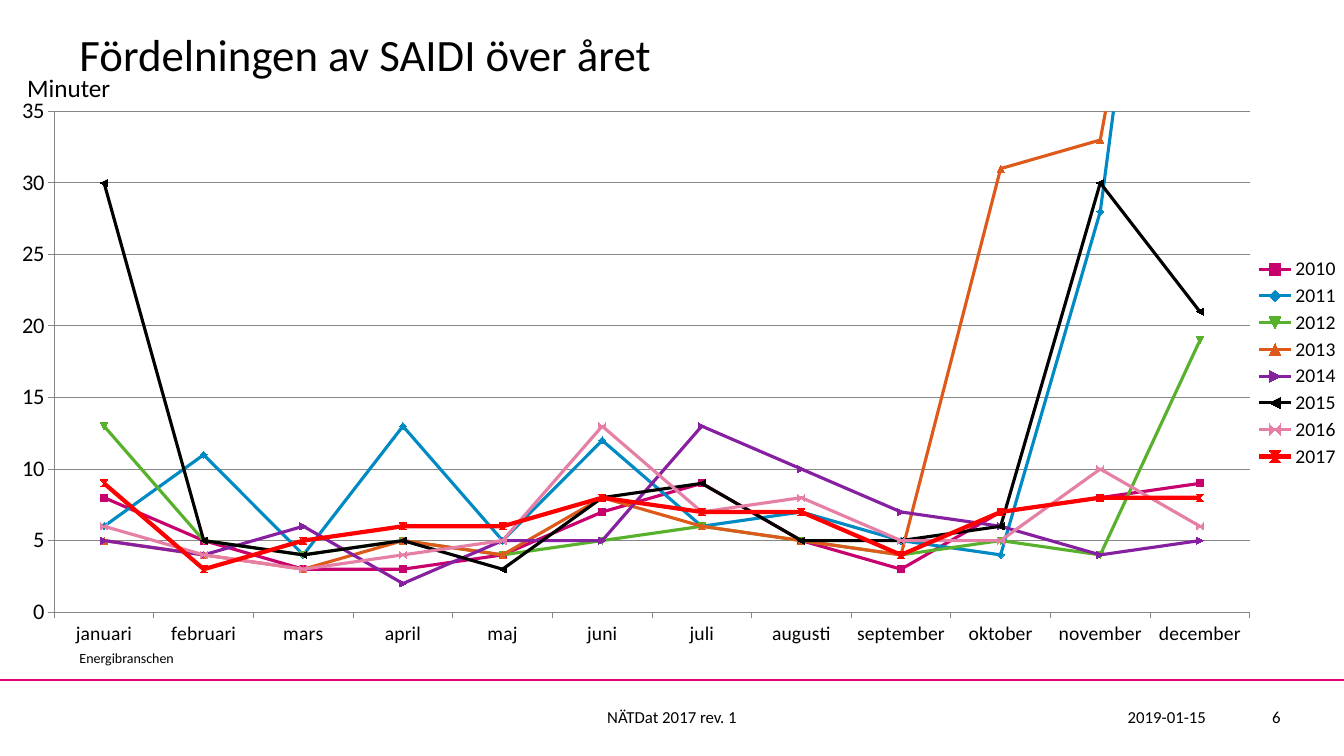
from pptx import Presentation
from pptx.chart.data import CategoryChartData
from pptx.dml.color import RGBColor
from pptx.enum.chart import XL_CHART_TYPE, XL_LEGEND_POSITION, XL_TICK_MARK
from pptx.enum.shapes import MSO_CONNECTOR
from pptx.enum.text import MSO_ANCHOR, PP_ALIGN
from pptx.oxml import parse_xml
from pptx.oxml.ns import nsdecls, qn
from pptx.util import Inches, Pt
from lxml.etree import SubElement

# Content
MONTHS = ["januari", "februari", "mars", "april", "maj", "juni", "juli",
          "augusti", "september", "oktober", "november", "december"]
MINUTES = {
    "2010": [8, 5, 3, 3, 4, 7, 9, 5, 3, 7, 8, 9],
    "2011": [6, 11, 4, 13, 5, 12, 6, 7, 5, 4, 28, 81],
    "2012": [13, 5, 4, 5, 4, 5, 6, 5, 4, 5, 4, 19],
    "2013": [5, 4, 3, 5, 4, 8, 6, 5, 4, 31, 33, 71],
    "2014": [5, 4, 6, 2, 5, 5, 13, 10, 7, 6, 4, 5],
    "2015": [30, 5, 4, 5, 3, 8, 9, 5, 5, 6, 30, 21],
    "2016": [6, 4, 3, 4, 5, 13, 7, 8, 5, 5, 10, 6],
    "2017": [9, 3, 5, 6, 6, 8, 7, 7, 4, 7, 8, 8],
}

# Theme
THEME = {
    "font": "Calibri", "text": "000000", "rule": "E6007E", "grid": "868686",
    "title": 32, "unit": 18, "axis": 16, "chart": 14, "footer": 12, "source": 10,
    "years": ["C8006E", "008AC4", "58B12C", "DE5A1B", "861FA0", "000000",
              "E67FA5", "FF0000"],
}

# Layout: slide size, margins and bands in inches; chart parts as shares
W, H = 13.33, 7.5
MARGIN, EDGE = 0.69, 0.17
FOOT_Y, FOOT_H = 6.91, 0.4
RULE_Y = 6.75
CHART = (EDGE, 0.97, W - EDGE, 5.44)
PLOT = {"x": 0.028, "y": 0.024, "w": 0.901, "h": 0.917}
LEGEND = {"x": 0.93, "y": 0.286, "w": 0.07, "h": 0.397}

# Text, box, size, paragraph format, frame format
MID = {"vertical_anchor": MSO_ANCHOR.MIDDLE}
RIGHT, CENTER = {"alignment": PP_ALIGN.RIGHT}, {"alignment": PP_ALIGN.CENTER}
TEXTS = [
    ("Fördelningen av SAIDI över året", (MARGIN, 0, 12, 0.85), "title",
     {"line_spacing": 0.85}, {"vertical_anchor": MSO_ANCHOR.BOTTOM}),
    ("2019-01-15", (10.49, FOOT_Y, 1.57, FOOT_H), "footer", RIGHT, MID),
    ("NÄTDat 2017 rev. 1", (3.29, FOOT_Y, 6.75, FOOT_H), "footer", CENTER, MID),
    ("6", (12.14, FOOT_Y, 0.66, FOOT_H), "footer", RIGHT, MID),
    ("Energibranschen", (MARGIN, 6.41, 7.5, 0.2), "source", {"line_spacing": 0.9}, {}),
    ("Minuter", (EDGE, 0.7, 1.04, 0.37), "unit", {"line_spacing": 0.9},
     {"word_wrap": False}),
]


def set_all(obj, values):
    for name, value in values.items():
        setattr(obj, name, value)


def rgb(code):
    return RGBColor.from_string(code)


def style_font(font, size):
    set_all(font, {"name": THEME["font"], "size": Pt(THEME[size])})
    font.color.rgb = rgb(THEME["text"])


def style_line(line, color, width):
    line.color.rgb = rgb(color)
    line.width = Pt(width)


def add_text(s, text, box, size, para, frame):
    tf = s.shapes.add_textbox(*map(Inches, box)).text_frame
    set_all(tf, {"word_wrap": True, **frame})
    p = tf.paragraphs[0]
    set_all(p, para)
    r = p.add_run()
    r.text = text
    style_font(r.font, size)


def add_rule(s):
    y = Inches(RULE_Y)
    line = s.shapes.add_connector(MSO_CONNECTOR.STRAIGHT, 0, y, Inches(W), y)
    style_line(line.line, THEME["rule"], 1.5)
    SubElement(line._element.spPr, qn("a:effectLst"))


def place_part(part, shares, index, target=""):
    for old in part.findall(qn("c:layout")):
        part.remove(old)
    modes = f'{target}<c:xMode val="edge"/><c:yMode val="edge"/>'
    sizes = "".join(f'<c:{k} val="{v}"/>' for k, v in shares.items())
    part.insert(index, parse_xml(f'<c:layout {nsdecls("c")}><c:manualLayout>'
                                 f'{modes}{sizes}</c:manualLayout></c:layout>'))


def add_line_chart(s):
    data = CategoryChartData()
    data.categories = MONTHS
    for year, values in MINUTES.items():
        data.add_series(year, values)
    chart = s.shapes.add_chart(XL_CHART_TYPE.LINE_MARKERS,
                               *map(Inches, CHART), data).chart
    style_font(chart.font, "chart")
    set_all(chart, {"has_title": False, "has_legend": True})
    set_all(chart.legend, {"position": XL_LEGEND_POSITION.RIGHT,
                           "include_in_layout": False})
    chart.plots[0].vary_by_categories = False
    parts = chart._chartSpace.chart
    place_part(parts.plotArea, PLOT, 0, '<c:layoutTarget val="inner"/>')
    place_part(parts.find(qn("c:legend")), LEGEND, 1)

    # Axes
    axis = chart.value_axis
    set_all(axis, {"minimum_scale": 0, "maximum_scale": 35, "major_unit": 5,
                   "has_major_gridlines": True})
    style_font(axis.tick_labels.font, "axis")
    style_line(axis.major_gridlines.format.line, THEME["grid"], 0.75)
    for ax in (axis, chart.category_axis):
        ax.major_tick_mark = XL_TICK_MARK.OUTSIDE
        style_line(ax.format.line, THEME["grid"], 0.75)

    # Series, with the latest year heavier
    latest = list(MINUTES)[-1]
    for ser, color in zip(chart.plots[0].series, THEME["years"]):
        ser.smooth = False
        style_line(ser.format.line, color, 3 if ser.name == latest else 2.25)
        ser.marker.size = 5
        ser.marker.format.fill.solid()
        ser.marker.format.fill.fore_color.rgb = rgb(color)
        ser.marker.format.line.color.rgb = rgb(color)


def main():
    prs = Presentation()
    set_all(prs, {"slide_width": Inches(W), "slide_height": Inches(H)})
    s = prs.slides.add_slide(prs.slide_layouts[6])
    add_rule(s)
    for item in TEXTS:
        add_text(s, *item)
    add_line_chart(s)
    prs.save("out.pptx")


if __name__ == "__main__":
    main()
